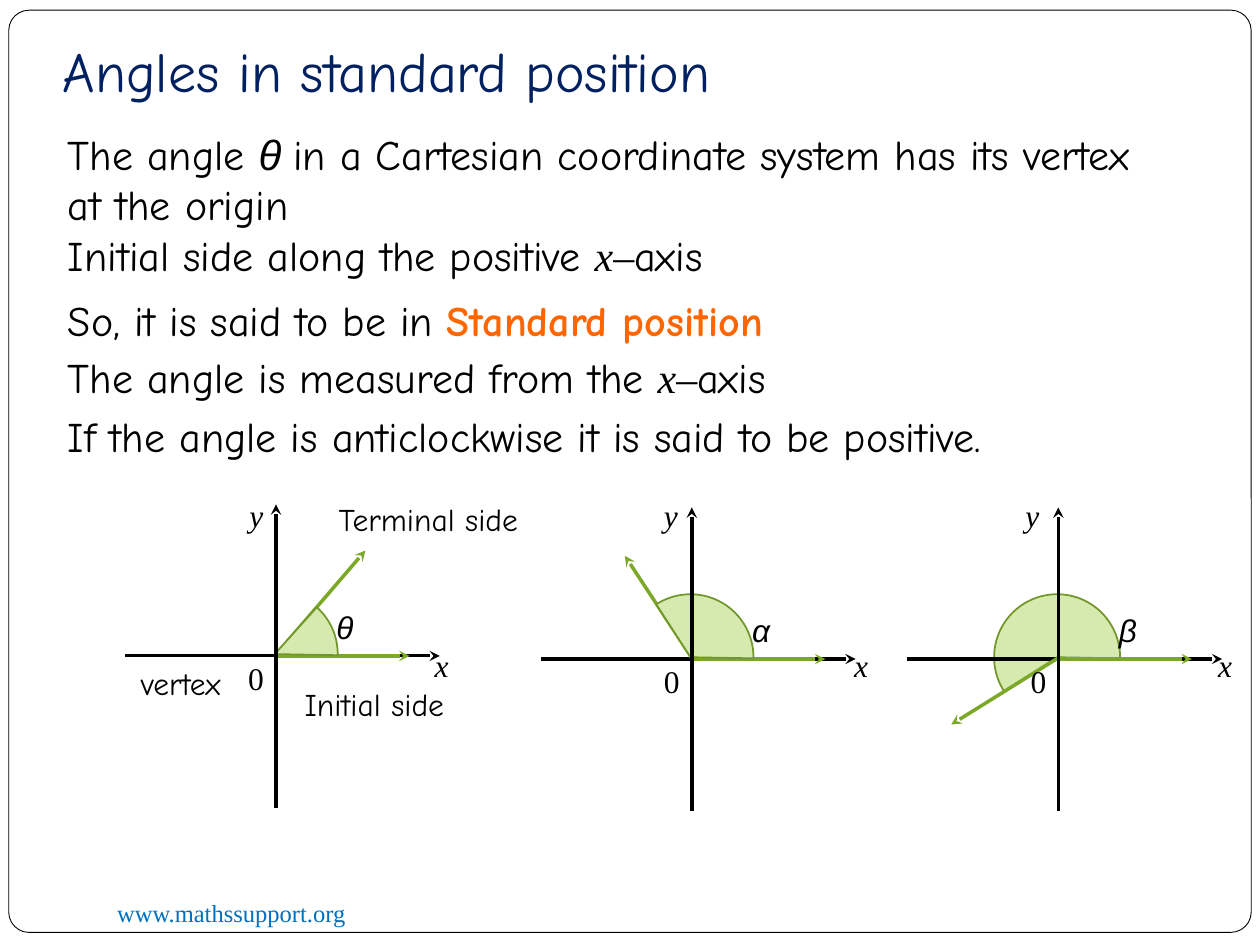
"""Builds the slide on angles in standard position."""
from lxml import etree
from pptx import Presentation
from pptx import util as u
from pptx.dml.color import RGBColor
from pptx.enum import shapes, text
from pptx.oxml.ns import qn

BLACK = RGBColor(0x00, 0x00, 0x00)
WHITE = RGBColor(0xFF, 0xFF, 0xFF)
NAVY = RGBColor(0x00, 0x20, 0x60)
BLUE = RGBColor(0x00, 0x70, 0xC0)
ORANGE = RGBColor(0xFF, 0x66, 0x00)
GREEN = RGBColor(0x7C, 0xA8, 0x27)
DARK_GREEN = RGBColor(0x71, 0x96, 0x29)
LIGHT_GREEN = RGBColor(0xD6, 0xEA, 0xAF)

COMIC, TIMES, ARIAL = "Comic Neue", "Times New Roman", "Arial"
X_AXIS = [("x", TIMES, {"italic": True}), ("–", TIMES, {}), ("axis", COMIC, {})]

STATEMENTS = [
    (69.8, 65.5, [("The angle ", COMIC, {}), ("θ ", ARIAL, {"italic": True}),
                  ("in a Cartesian coordinate system has its vertex at the origin", COMIC, {})]),
    (127.4, 36, [("Initial side along the positive ", COMIC, {}), *X_AXIS]),
    (164.9, 36, [("So, it is said to be in ", COMIC, {}),
                 ("Standard position", COMIC, {"bold": True, "color": ORANGE})]),
    (197.3, 36, [("The angle is measured from the ", COMIC, {}), *X_AXIS]),
    (231.1, 36, [("If the angle is anticlockwise it is said to be positive.", COMIC, {})]),
]

SIDE_LABELS = [
    ("vertex", 73.4, 375.8, 71.3),
    ("Initial side", 167, 388.1, 112.3),
    ("Terminal side", 186.5, 282.2, 139),
]


def add_text(page, place, runs, size, color=BLACK, wrap=True):
    """Add a text box of one paragraph made of (words, font, style) runs."""
    box = page.shapes.add_textbox(*map(u.Pt, place))
    frame = box.text_frame
    frame.word_wrap = wrap
    frame.auto_size = text.MSO_AUTO_SIZE.SHAPE_TO_FIT_TEXT
    para = frame.paragraphs[0]
    para.font.size = u.Pt(size)
    para.font.color.rgb = color
    if len(runs) == 1:
        para.font.name = runs[0][1]
        para.font.italic = runs[0][2].get("italic")
    for words, font, style in runs:
        span = para.add_run()
        span.text = words
        if len(runs) > 1:
            span.font.name = font
            span.font.italic = style.get("italic")
            span.font.bold = style.get("bold")
            if "color" in style:
                span.font.color.rgb = style["color"]


def add_symbol(page, left, top, symbol, font=TIMES, italic=True):
    """Add a one-letter label of a diagram."""
    add_text(page, (left, top, 25.2, 28.8), [(symbol, font, {"italic": italic})], 18)


def add_arrow(page, start, end, color, width):
    """Add a straight line with a stealth arrowhead at its end."""
    arrow = page.shapes.add_connector(
        shapes.MSO_CONNECTOR.STRAIGHT, *map(u.Pt, (*start, *end)))
    arrow.line.color.rgb = color
    arrow.line.width = u.Pt(width)
    etree.SubElement(arrow.line._get_or_add_ln(), qn("a:tailEnd"), type="stealth")
    etree.SubElement(arrow._element.spPr, qn("a:effectLst"))


def add_outlined(page, kind, place, fill, line, width, adjustments):
    """Add a filled preset shape with an outline."""
    shape = page.shapes.add_shape(kind, *map(u.Pt, place))
    shape.shadow.inherit = False
    shape.fill.solid()
    shape.fill.fore_color.rgb = fill
    shape.line.color.rgb = line
    shape.line.width = u.Pt(width)
    for index, value in enumerate(adjustments):
        shape.adjustments[index] = value


def add_sector(page, x, y, start):
    """Add the sector of an angle around the origin."""
    add_outlined(page, shapes.MSO_SHAPE.PIE, (x - 36.7, y - 37, 72, 72),
                 LIGHT_GREEN, DARK_GREEN, 1, (start, 0.605))


def add_diagram(page, x, y, angle, start, tip, y_label, x_label, sector_behind=False):
    """Add axes, both sides, sector and labels around the origin (x, y)."""
    if sector_behind:
        add_sector(page, x, y, start)
    add_arrow(page, (x - 86.4, y), (x + 93.6, y), BLACK, 1.75)
    add_arrow(page, (x, y - 0.7), (x + tip[0], y + tip[1]), GREEN, 2)
    add_arrow(page, (x - 0.7, y), (x + 76.3, y), GREEN, 2)
    if not sector_behind:
        add_sector(page, x, y, start)
    add_arrow(page, (x, y + 87), (x, y - 86.6), BLACK, 2)
    add_symbol(page, x + 27.4, y - 31, angle, ARIAL)
    add_symbol(page, x + y_label, 280.1, "y")
    add_symbol(page, x + x_label, 365.8, "x")
    add_symbol(page, x - 23, y - 1.6, "0", italic=False)


def main():
    """Build the slide and save it."""
    deck = Presentation()
    deck.slide_width, deck.slide_height = u.Pt(720), u.Pt(540)
    page = deck.slides.add_slide(deck.slide_layouts[6])

    add_outlined(page, shapes.MSO_SHAPE.ROUNDED_RECTANGLE, (5, 5.8, 710, 527),
                 WHITE, BLACK, 0.5, (0.022,))
    add_text(page, (59.8, 509.8, 234, 24.5),
             [("www.mathssupport.org", TIMES, {})], 14, BLUE)
    add_text(page, (28.8, 17.3, 622, 46),
             [("Angles in standard position", COMIC, {})], 32, NAVY)
    for top, height, runs in STATEMENTS:
        add_text(page, (31.7, top, 643.7, height), runs, 24)

    add_diagram(page, 157.7, 374.8, "θ", 187.179, (51.1, -60.2), -22.3, 83.5)
    add_diagram(page, 395.3, 376.6, "α", 142.286, (-38.2, -59), -23, 85.7)
    add_diagram(page, 604.8, 376.6, "β", 88.376, (-61.2, 37.4), -25.9, 84.2,
                sector_behind=True)
    for words, left, top, width in SIDE_LABELS:
        add_text(page, (left, top, width, 28.8), [(words, COMIC, {})], 18, wrap=False)

    deck.save("out.pptx")


if __name__ == "__main__":
    main()
